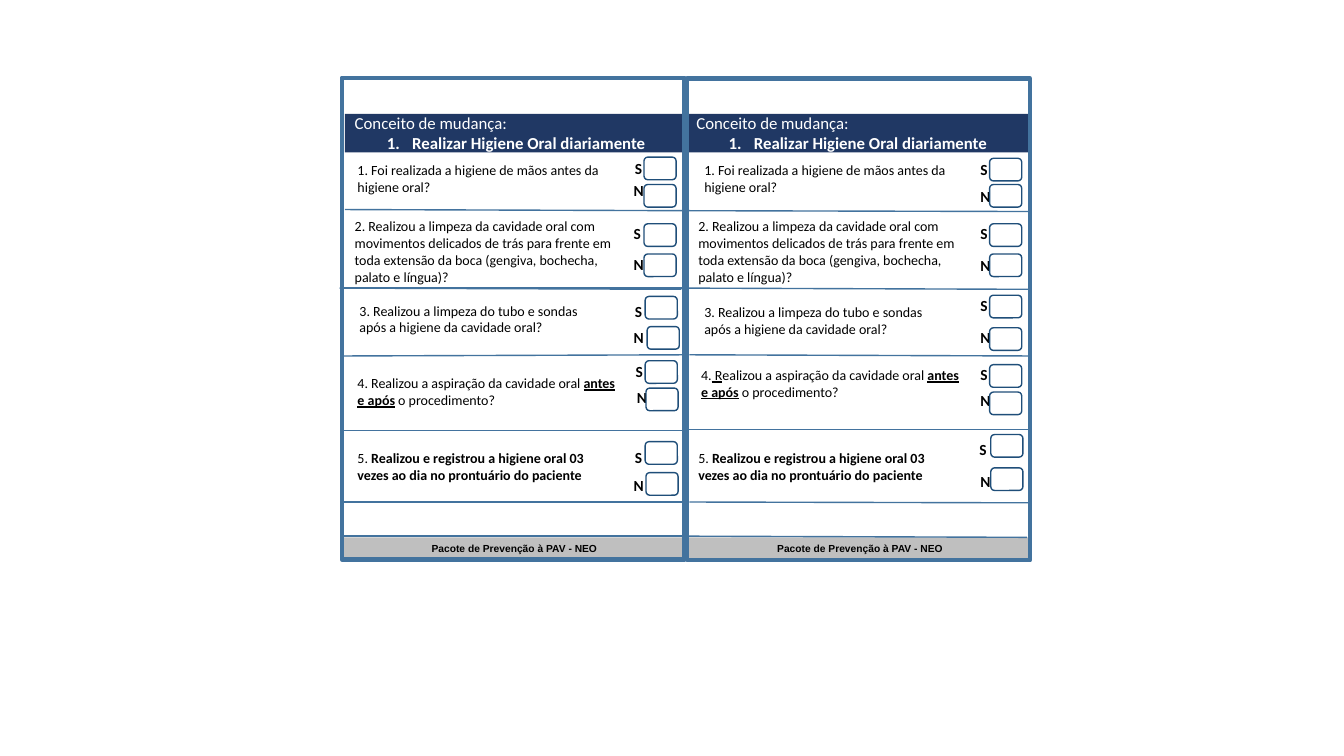
from lxml import etree
from pptx import Presentation
from pptx.dml.color import RGBColor
from pptx.enum.shapes import MSO_CONNECTOR, MSO_SHAPE
from pptx.enum.text import MSO_ANCHOR, PP_ALIGN
from pptx.oxml.ns import qn
from pptx.util import Cm, Pt

STEEL, NAVY, INK = "43739E", "203864", "1F4E79"
PANEL_WIDTH, RULE_LENGTH = 8.64, 8.61

# Each run is its text and its style: b for bold, u for underlined.
hands = [("1. Foi realizada a higiene de mãos antes da higiene oral?", "")]
mouth = [("2. Realizou a limpeza da cavidade oral com movimentos delicados de trás para frente "
          "em toda extensão da boca (gengiva, bochecha, palato e língua)?", "")]
tube = [("3. Realizou a limpeza do tubo e sondas após a higiene da cavidade oral?", "")]
suction_end = [("ealizou a aspiração da cavidade oral ", ""), ("antes e após", "bu"),
               (" o procedimento?", "")]
suction_left = [("4. R", "")] + suction_end
suction_right = [("4.", ""), (" R", "u")] + suction_end
record = [("5. ", ""),
          ("Realizou e registrou a higiene oral 03 vezes ao dia no prontuário do paciente", "b")]

panels = [
    {
        "footer": 8.64, "header": 8.69, "frame": (8.61, 1.96),
        "questions": [  # runs, left, top, width, height
            (hands, 8.76, 3.84, 7.11, 1.3), (mouth, 8.69, 5.52, 7.44, 1.63),
            (tube, 8.81, 7.44, 6.53, 1.19), (suction_left, 8.76, 9.14, 7.11, 1.45),
            (record, 8.76, 11.15, 6.45, 1.22)],
        "answers": [  # letter, label left and top, box left and top
            ("S", 15.75, 4.04, 16.23, 3.96), ("N", 15.72, 4.62, 16.23, 4.65),
            ("S", 15.72, 5.66, 16.23, 5.64), ("N", 15.72, 6.48, 16.23, 6.4),
            ("S", 15.75, 7.62, 16.26, 7.47), ("N", 15.72, 8.31, 16.31, 8.23),
            ("S", 15.77, 9.14, 16.26, 9.09), ("N", 15.8, 9.83, 16.28, 9.78),
            ("S", 15.75, 11.3, 16.26, 11.13), ("N", 15.72, 12.04, 16.28, 11.91)],
        "rules": [  # left, start height, end height
            (8.69, 5.28, 5.31), (8.66, 7.26, 7.26), (8.56, 7.26, 7.29), (8.66, 8.97, 8.94),
            (8.66, 10.85, 10.85), (8.64, 12.65, 12.65), (8.59, 13.51, 13.51)],
    },
    {
        "footer": 17.35, "header": 17.3, "frame": (17.32, 1.98),
        "questions": [
            (hands, 17.5, 3.84, 7.11, 1.3), (mouth, 17.35, 5.52, 7.39, 1.63),
            (tube, 17.5, 7.49, 6.53, 1.19), (suction_right, 17.42, 8.93, 7.11, 1.45),
            (record, 17.35, 11.15, 6.45, 1.22)],
        "answers": [
            ("S", 24.46, 4.06, 24.94, 3.99), ("N", 24.46, 4.78, 24.94, 4.65),
            ("S", 24.46, 5.66, 24.94, 5.64), ("N", 24.46, 6.5, 24.94, 6.4),
            ("S", 24.46, 7.49, 24.94, 7.44), ("N", 24.46, 8.33, 24.94, 8.26),
            ("S", 24.46, 9.22, 24.94, 9.19), ("N", 24.46, 9.91, 24.94, 9.88),
            ("S", 24.43, 11.1, 24.97, 10.95), ("N", 24.46, 11.94, 24.97, 11.79)],
        "rules": [
            (17.32, 5.31, 5.33), (17.3, 7.26, 7.29), (17.37, 8.94, 8.97),
            (17.32, 10.82, 10.82), (17.37, 12.65, 12.67), (17.27, 13.51, 13.54)],
    },
]

prs = Presentation()
prs.slide_width, prs.slide_height = Cm(33.87), Cm(19.05)
slide = prs.slides.add_slide(prs.slide_layouts[6])


def add_box(kind, left, top, width, height, fill=None, line=None, weight=1):
    """Add a preset shape, or a wrapping text box when kind is None."""
    place = [Cm(length) for length in (left, top, width, height)]
    if kind is None:
        box = slide.shapes.add_textbox(*place)
    else:
        box = slide.shapes.add_shape(kind, *place)
        box.shadow.inherit = False
        if fill:
            box.fill.solid()
            box.fill.fore_color.rgb = RGBColor.from_string(fill)
        else:
            box.fill.background()
        if line:
            box.line.color.rgb = RGBColor.from_string(line)
            box.line.width = Pt(weight)
        else:
            box.line.fill.background()
    box.text_frame.word_wrap = True
    box.text_frame.vertical_anchor = MSO_ANCHOR.MIDDLE
    return box


def style(paragraph, size, color="000000", bold=None, font="Calibri", align=PP_ALIGN.LEFT):
    paragraph.alignment = align
    paragraph.font.name, paragraph.font.size = font, Pt(size)
    paragraph.font.bold = bold
    paragraph.font.color.rgb = RGBColor.from_string(color)


for panel in panels:
    footer = add_box(MSO_SHAPE.RECTANGLE, panel["footer"], 13.54, PANEL_WIDTH, 0.56, "BFBFBF")
    footer.text_frame.text = "Pacote de Prevenção à PAV - NEO"
    style(footer.text_frame.paragraphs[0], 7.3, bold=True, font="Arial", align=PP_ALIGN.CENTER)

    header = add_box(MSO_SHAPE.RECTANGLE, panel["header"], 2.87, PANEL_WIDTH, 0.97, NAVY)
    header.text_frame.text = "Conceito de mudança:\nRealizar Higiene Oral diariamente"
    concept, change = header.text_frame.paragraphs
    style(concept, 12, "FFFFFF")
    style(change, 12, "FFFFFF", bold=True, align=PP_ALIGN.CENTER)
    numbering = change._p.get_or_add_pPr()
    numbering.set("marL", str(Cm(0.64)))
    numbering.set("indent", str(-Cm(0.64)))
    number = etree.Element(qn("a:buAutoNum"), type="arabicPeriod")
    numbering.insert_element_before(number, "a:tabLst", "a:defRPr", "a:extLst")

    add_box(MSO_SHAPE.RECTANGLE, *panel["frame"], PANEL_WIDTH, 12.14, line=STEEL, weight=3)

    for runs, *place in panel["questions"]:
        paragraph = add_box(None, *place).text_frame.paragraphs[0]
        style(paragraph, 10)
        for words, marks in runs:
            run = paragraph.add_run()
            run.text = words
            if "b" in marks:
                run.font.bold = True
            if "u" in marks:
                run.font.underline = True

    for letter, label_left, label_top, box_left, box_top in panel["answers"]:
        label_height = 0.43 if letter == "S" else 0.36
        label = add_box(None, label_left, label_top, 0.61, label_height)
        label.text_frame.text = letter
        style(label.text_frame.paragraphs[0], 11, bold=True, align=PP_ALIGN.CENTER)
        add_box(MSO_SHAPE.ROUNDED_RECTANGLE, box_left, box_top, 0.81, 0.57, line=INK)

    for left, start, end in panel["rules"]:
        rule = slide.shapes.add_connector(
            MSO_CONNECTOR.STRAIGHT, Cm(left), Cm(start), Cm(left + RULE_LENGTH), Cm(end))
        rule.line.color.rgb = RGBColor.from_string(STEEL)
        rule.line.width = Pt(1)
        etree.SubElement(rule._element.spPr, qn("a:effectLst"))

prs.save("out.pptx")
